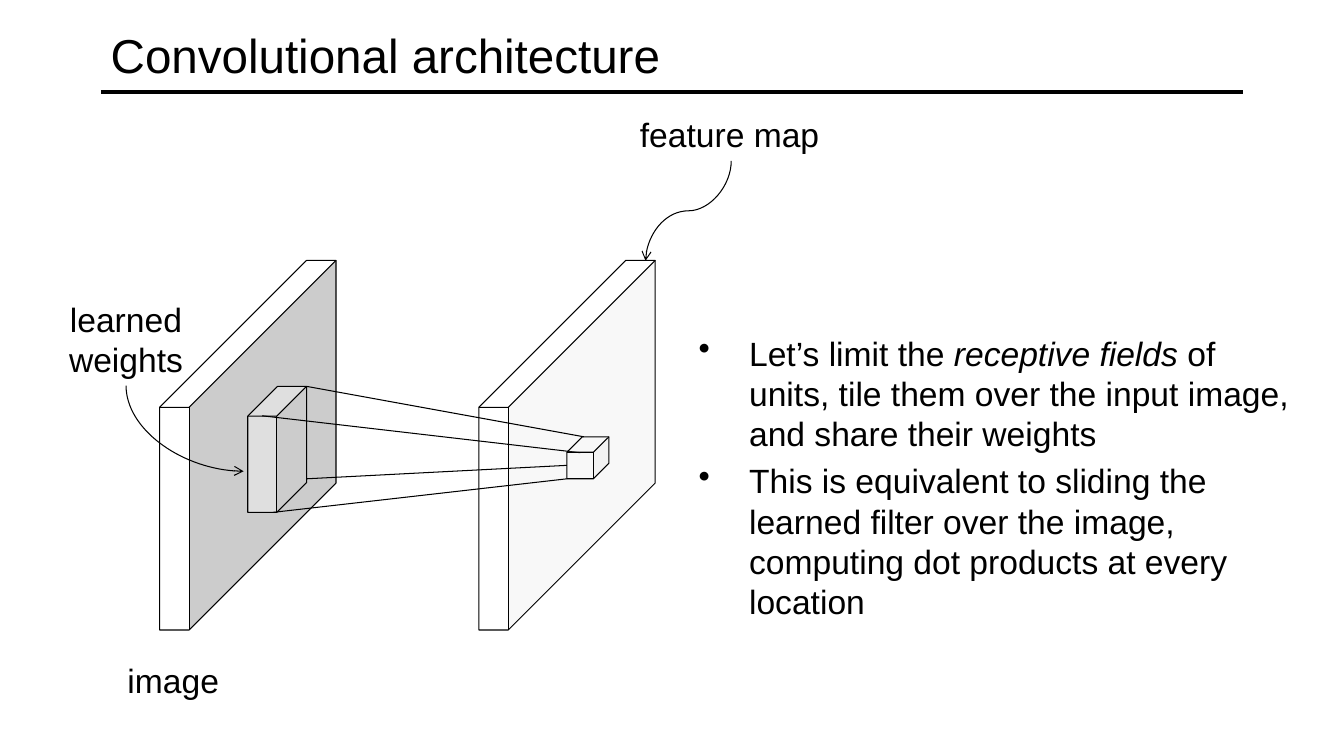
import pptx
import pptx.dml.color
import pptx.enum.shapes
import pptx.enum.text
import pptx.oxml
import pptx.oxml.ns
import pptx.util
from lxml import etree

Pt = pptx.util.Pt
qn = pptx.oxml.ns.qn
SHAPE = pptx.enum.shapes.MSO_SHAPE
LINK = pptx.enum.shapes.MSO_CONNECTOR
ALIGN = pptx.enum.text.PP_ALIGN
ANCHOR = pptx.enum.text.MSO_ANCHOR
BLACK = pptx.dml.color.RGBColor(0, 0, 0)
WHITE = pptx.dml.color.RGBColor(255, 255, 255)
FONT = "Arial"
COLS, ROWS = 160, 90
CELL = pptx.util.Inches(1) / 12
BULLETS = [
    [("Let’s limit the ", False), ("receptive fields ", True),
     ("of units, tile them over the input image, and share their weights", False)],
    [("This is equivalent to sliding the learned filter over the image, "
      "computing dot products at every location", False)],
]


def grid(*cells):
    return [round(n * CELL) for n in cells]


def style(par, size=24):
    par.font.name = FONT
    par.font.size = Pt(size)
    par.font.color.rgb = BLACK


def text(slide, box, words="", size=24, wrap=True, align=ALIGN.LEFT, anchor=ANCHOR.TOP):
    frame = slide.shapes.add_textbox(*grid(*box)).text_frame
    frame.word_wrap = wrap
    frame.vertical_anchor = anchor
    par = frame.paragraphs[0]
    par.text = words
    par.alignment = align
    style(par, size)
    return frame


def line(slide, ends, width=0.75, kind=LINK.STRAIGHT):
    link = slide.shapes.add_connector(kind, *grid(*ends))
    link.line.color.rgb = BLACK
    link.line.width = Pt(width)
    etree.SubElement(link.element.spPr, qn("a:effectLst"))
    return link


def curve(slide, box, turn, flip, preset):
    x, y, w, h = box
    link = line(slide, (x, y, x + w, y + h), kind=LINK.CURVE)
    props = link.element.spPr
    frame = props.find(qn("a:xfrm"))
    frame.set("rot", str(turn * 60000))
    if flip:
        frame.set("flipH", "1")
    props.find(qn("a:prstGeom")).set("prst", preset)
    etree.SubElement(props.find(qn("a:ln")), qn("a:tailEnd"), type="arrow")


def cube(slide, box, depth, alpha=100):
    block = slide.shapes.add_shape(SHAPE.CUBE, *grid(*box))
    block.adjustments[0] = depth
    block.shadow.inherit = False
    block.fill.solid()
    block.fill.fore_color.rgb = WHITE
    block.line.color.rgb = BLACK
    block.line.width = Pt(0.75)
    if alpha < 100:
        tint = block.element.spPr.find(qn("a:solidFill"))[0]
        etree.SubElement(tint, qn("a:alpha"), val=str(alpha * 1000))


def header(slide, box):
    x, y, w, h = box
    line(slide, (x, y + h - 1, x + w, y + h - 1), 3)
    text(slide, box, "Convolutional architecture", 34, anchor=ANCHOR.MIDDLE)


def scene(slide, box):
    x, y, w, h = box
    plate = 21
    cube(slide, (x, y, plate, h), 0.833)
    cube(slide, (x + w - plate, y, plate, h), 0.833, 13)
    cube(slide, (x + 10.5, y + 15, 7, 15), 0.507, 39)
    for x1, y1, x2, y2 in [(17.5, 15, 50.5, 21), (12.2, 18.5, 50.1, 22.9),
                           (13.5, 30, 48.5, 26), (17.5, 26, 48.5, 24.4)]:
        line(slide, (x + x1, y + y1, x + x2, y + y2))
    cube(slide, (x + 48.5, y + 21, 5, 5), 0.369, 13)
    text(slide, (x - 5, y + 47, 13.5, 6), "image", wrap=False)
    text(slide, (x + 56, y - 18, 24, 6), "feature map", wrap=False)
    text(slide, (x - 13, y + 4, 18, 11), "learned weights", align=ALIGN.CENTER)
    curve(slide, (x + 57, y - 11, 11.9, 10.2), 90, False, "curvedConnector3")
    curve(slide, (x - 2.1, y + 13, 10.2, 14), 270, True, "curvedConnector2")


def notes(slide, box):
    frame = text(slide, box)
    for i, runs in enumerate(BULLETS):
        par = frame.add_paragraph() if i else frame.paragraphs[0]
        style(par)
        par.space_before = Pt(4.8)
        props = par._p.get_or_add_pPr()
        indent = pptx.util.Inches(0.5)
        props.set("marL", str(indent))
        props.set("indent", str(-indent))
        mark = pptx.oxml.parse_xml(
            '<a:buChar xmlns:a="http://schemas.openxmlformats.org/drawingml/2006/main" char="•"/>')
        props.find(qn("a:defRPr")).addprevious(mark)
        for words, slant in runs:
            run = par.add_run()
            run.text = words
            if slant:
                run.font.italic = True


def main():
    deck = pptx.Presentation()
    deck.slide_width, deck.slide_height = grid(COLS, ROWS)
    slide = deck.slides.add_slide(deck.slide_layouts[6])
    header(slide, (12, 1, 136, 11))
    scene(slide, (19, 31, 59, 44))
    notes(slide, (82, 39, 74, 32))
    deck.save("out.pptx")


if __name__ == "__main__":
    main()
